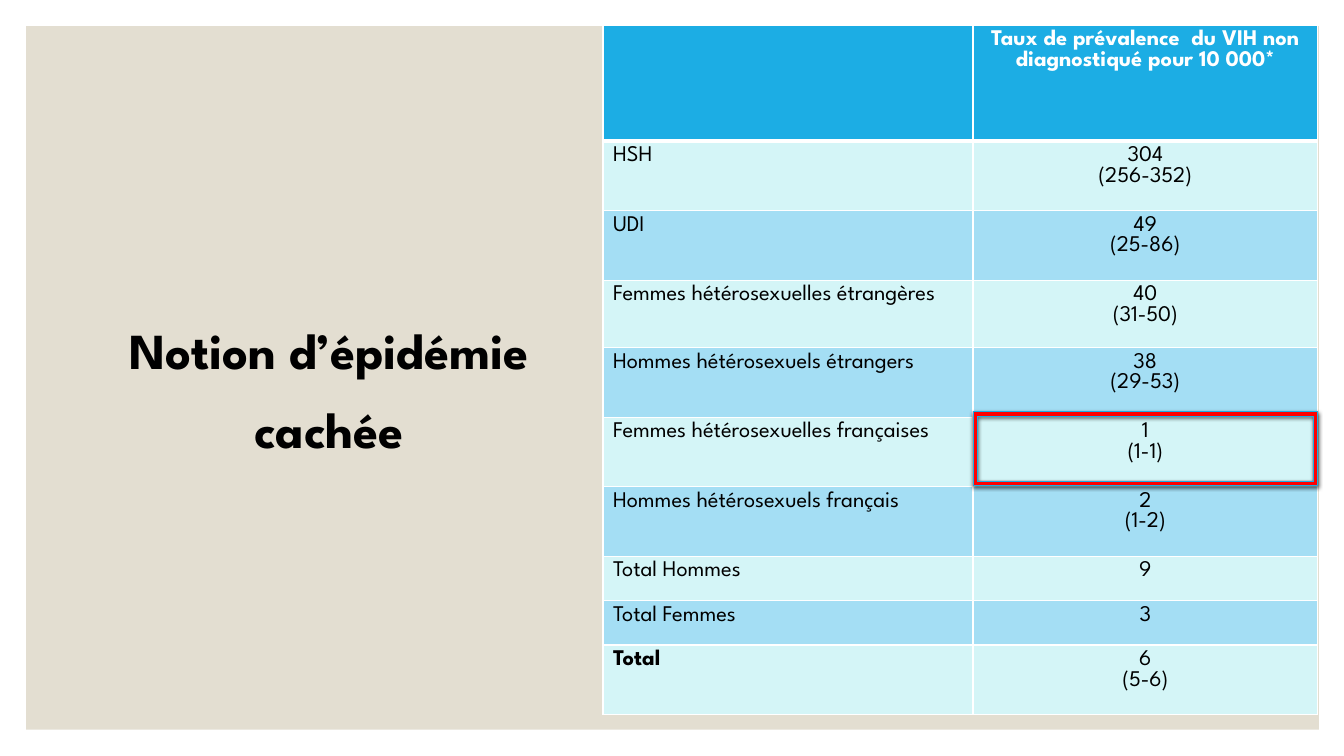
from lxml import etree
from pptx import Presentation
from pptx.dml.color import RGBColor
from pptx.enum.shapes import MSO_SHAPE
from pptx.enum.text import MSO_ANCHOR, PP_ALIGN
from pptx.oxml.ns import qn
from pptx.util import Inches, Pt

RECT, FRAME = MSO_SHAPE.RECTANGLE, MSO_SHAPE.FRAME
TOP = MSO_ANCHOR.TOP
LEFT, CENTER = PP_ALIGN.LEFT, PP_ALIGN.CENTER

FONT = "League Spartan"
BLACK = RGBColor(0x00, 0x00, 0x00)
WHITE = RGBColor(0xFF, 0xFF, 0xFF)
SAND = RGBColor(0xE3, 0xDE, 0xD1)
BLUE = RGBColor(0x1C, 0xAD, 0xE4)
RED = RGBColor(0xFF, 0x00, 0x00)
BANDS = (RGBColor(0xD4, 0xF5, 0xF7), RGBColor(0xA4, 0xDE, 0xF4))

TITLE = "Notion d’épidémie cachée"
HEADER = ("", "Taux de prévalence  du VIH non diagnostiqué pour 10 000*")
# Group, rate with its interval on a second line, row height
RATES = [
    ("HSH", "304\n(256-352)", 0.69),
    ("UDI", "49\n(25-86)", 0.69),
    ("Femmes hétérosexuelles étrangères", "40\n(31-50)", 0.67),
    ("Hommes hétérosexuels étrangers", "38\n(29-53)", 0.69),
    ("Femmes hétérosexuelles françaises", "1\n(1-1)", 0.69),
    ("Hommes hétérosexuels français", "2\n(1-2)", 0.69),
    ("Total Hommes", "9", 0.44),
    ("Total Femmes", "3", 0.44),
    ("Total", "6\n(5-6)", 0.69),
]
HEADER_HEIGHT = 1.15
COLUMN_WIDTHS = (3.67, 3.42)


def box(left, top, width, height):
    return [Inches(v) for v in (left, top, width, height)]


def write(tf, text, align, **font):
    """Fill a text frame, one paragraph per line."""
    tf.text = text
    for p in tf.paragraphs:
        p.alignment = align
        for r in p.runs:
            r.font.color.rgb = font["color"]
            for name, value in {"name": FONT, "size": font["size"],
                                "bold": font["bold"]}.items():
                setattr(r.font, name, value)


def add_shape(slide, kind, place, color):
    sp = slide.shapes.add_shape(kind, *box(*place))
    sp.shadow.inherit = False
    sp.fill.solid()
    sp.fill.fore_color.rgb = color
    sp.line.fill.background()
    return sp


def add_shadow(sp):
    effects = sp._element.spPr.find(qn("a:effectLst"))
    shadow = etree.SubElement(effects, qn("a:outerShdw"), blurRad=str(Pt(3)),
                              dist=str(Pt(1)), dir="5400000", rotWithShape="0")
    color = etree.SubElement(shadow, qn("a:srgbClr"), val=str(BLACK))
    etree.SubElement(color, qn("a:alpha"), val="63000")


def set_borders(cell, **widths):
    tc_pr = cell._tc.get_or_add_tcPr()
    for side in "LRTB":
        ln = etree.SubElement(tc_pr, qn(f"a:ln{side}"),
                              w=str(Pt(widths.get(side, 1))))
        fill = etree.SubElement(ln, qn("a:solidFill"))
        etree.SubElement(fill, qn("a:srgbClr"), val=str(WHITE))


def format_title(slide):
    title = slide.shapes.title
    title.left, title.top, title.width, title.height = box(0.99, 2.94, 4.55, 2.76)
    tf = title.text_frame
    tf.word_wrap = True
    tf.vertical_anchor = TOP
    write(tf, TITLE, CENTER, size=Pt(36), bold=True, color=BLACK)
    tf.paragraphs[0].line_spacing = 1.3


def add_rate_table(slide):
    heights = [HEADER_HEIGHT] + [height for _, _, height in RATES]
    place = box(5.98, 0.25, sum(COLUMN_WIDTHS), sum(heights))
    table = slide.shapes.add_table(len(heights), 2, *place).table
    for column, width in zip(table.columns, COLUMN_WIDTHS):
        column.width = Inches(width)
    for row, height in zip(table.rows, heights):
        row.height = Inches(height)

    texts = [HEADER] + [(group, rate) for group, rate, _ in RATES]
    for i, row_texts in enumerate(texts):
        is_header = i == 0
        for j, text in enumerate(row_texts):
            cell = table.cell(i, j)
            set_borders(cell, T=3 if i == 1 else 1, B=3 if is_header else 1)
            cell.fill.solid()
            cell.fill.fore_color.rgb = BLUE if is_header else BANDS[(i - 1) % 2]
            cell.vertical_anchor = TOP
            write(cell.text_frame, text, CENTER if j else LEFT, size=Pt(16),
                  bold=is_header or text == "Total",
                  color=WHITE if is_header else BLACK)


def add_highlight(slide):
    sp = add_shape(slide, FRAME, (9.65, 4.08, 3.42, 0.74), RED)
    sp.adjustments[0] = 0.065
    sp.line.color.rgb = BLUE
    sp.line.width = Pt(0.5)
    add_shadow(sp)


def main():
    prs = Presentation()
    prs.slide_width, prs.slide_height = Inches(13.33), Inches(7.5)
    slide = prs.slides.add_slide(prs.slide_layouts[5])

    # Background panel, behind the title
    panel = add_shape(slide, RECT, (0.26, 0.26, 12.82, 6.98), SAND)
    slide.shapes.title._element.addprevious(panel._element)

    format_title(slide)
    add_rate_table(slide)

    # Frame around the rate for French heterosexual women
    add_highlight(slide)

    prs.save("out.pptx")


if __name__ == "__main__":
    main()
